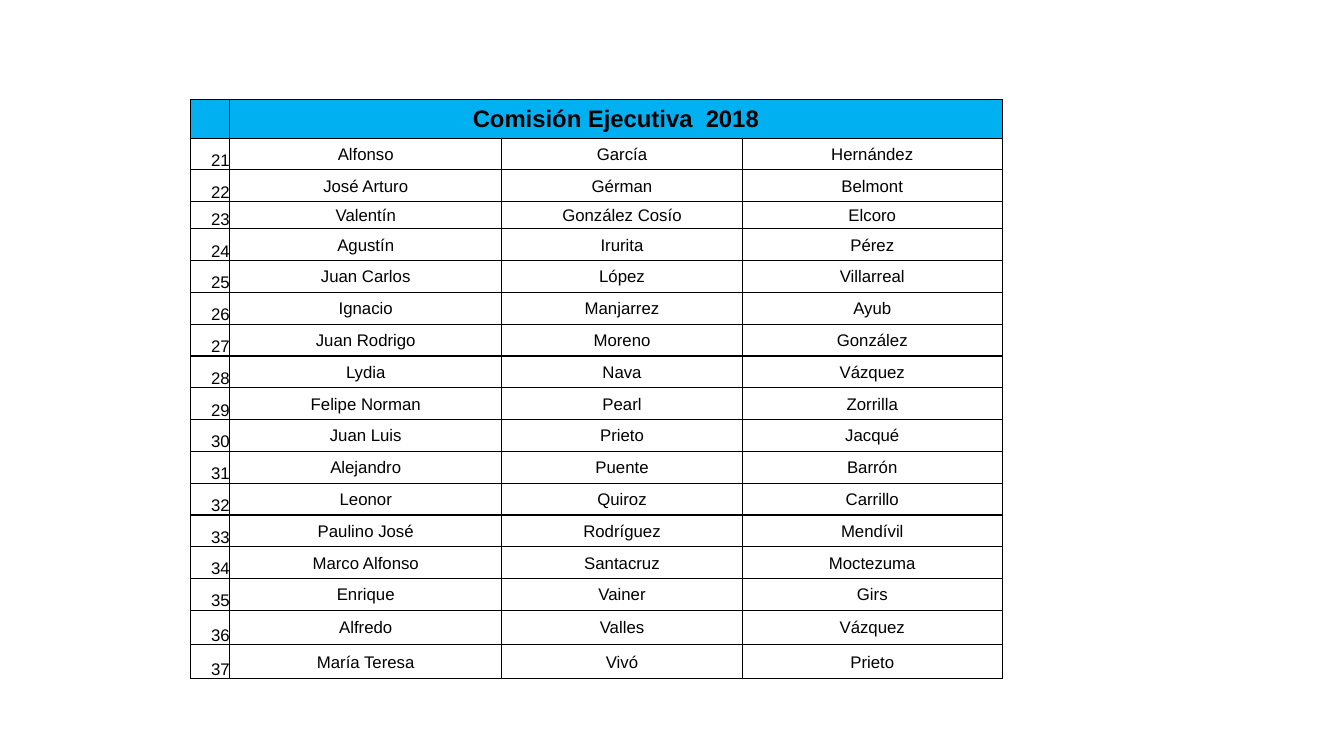
from lxml.etree import SubElement
from pptx import Presentation
from pptx.dml.color import RGBColor
from pptx.enum.text import MSO_ANCHOR as Anchor, PP_ALIGN as Align
from pptx.oxml.ns import qn
from pptx.util import Inches, Pt

COLORS = {"header": "00B0F0", "body": "FFFFFF", "ink": "000000"}
TITLE = "Comisión Ejecutiva  2018"
FIRST_NUMBER = 21
MEMBERS = [
    ("Alfonso", "García", "Hernández"),
    ("José Arturo", "Gérman", "Belmont"),
    ("Valentín", "González Cosío", "Elcoro"),
    ("Agustín", "Irurita", "Pérez"),
    ("Juan Carlos", "López", "Villarreal"),
    ("Ignacio", "Manjarrez", "Ayub"),
    ("Juan Rodrigo", "Moreno", "González"),
    ("Lydia", "Nava", "Vázquez"),
    ("Felipe Norman", "Pearl", "Zorrilla"),
    ("Juan Luis", "Prieto", "Jacqué"),
    ("Alejandro", "Puente", "Barrón"),
    ("Leonor", "Quiroz", "Carrillo"),
    ("Paulino José", "Rodríguez", "Mendívil"),
    ("Marco Alfonso", "Santacruz", "Moctezuma"),
    ("Enrique", "Vainer", "Girs"),
    ("Alfredo", "Valles", "Vázquez"),
    ("María Teresa", "Vivó", "Prieto"),
]
COLUMN_SHARES = [0.39, 2.7, 2.39, 2.58]
SPECIAL_ROWS = {0: 0.38, 3: 0.27, 16: 0.34, 17: 0.34}


def add_borders(cell, width=1):
    """Draw a thin line on all four sides of a cell."""
    properties = cell._tc.get_or_add_tcPr()
    for side in ("lnL", "lnR", "lnT", "lnB"):
        line = SubElement(properties, qn(f"a:{side}"), w=str(Pt(width)))
        fill = SubElement(line, qn("a:solidFill"))
        SubElement(fill, qn("a:srgbClr"), val=COLORS["ink"])


def write_cell(cell, text, *, fill="body", size=12, bold=False,
               align=Align.CENTER, anchor=Anchor.MIDDLE, inset=0):
    """Fill, border and letter one table cell."""
    add_borders(cell)
    cell.fill.solid()
    cell.fill.fore_color.rgb = RGBColor.from_string(COLORS[fill])
    cell.margin_left = cell.margin_right = cell.margin_top = Inches(inset)
    cell.margin_bottom = 0
    cell.vertical_anchor = anchor
    paragraph = cell.text_frame.paragraphs[0]
    paragraph.alignment = align
    if text:
        run = paragraph.add_run()
        run.text = text
        run.font.name = "Arial"
        run.font.size = Pt(size)
        run.font.bold = bold
        run.font.color.rgb = RGBColor.from_string(COLORS["ink"])


def add_committee_table(slide, left, top, width, height):
    """Place the numbered committee list inside the given box."""
    row_count = len(MEMBERS) + 1
    box = [Inches(length) for length in (left, top, width, height)]
    table = slide.shapes.add_table(row_count, len(COLUMN_SHARES), *box).table
    for column, share in zip(table.columns, COLUMN_SHARES):
        column.width = Inches(width * share / sum(COLUMN_SHARES))
    regular = (height - sum(SPECIAL_ROWS.values())) / (row_count - len(SPECIAL_ROWS))
    for index, row in enumerate(table.rows):
        row.height = Inches(SPECIAL_ROWS.get(index, regular))

    for column, text in enumerate(["", TITLE, "", ""]):
        write_cell(table.cell(0, column), text, fill="header", size=17, bold=True)
    table.cell(0, 1).merge(table.cell(0, 3))

    for row, names in enumerate(MEMBERS, start=1):
        write_cell(table.cell(row, 0), str(FIRST_NUMBER + row - 1),
                   align=Align.RIGHT, anchor=Anchor.BOTTOM)
        for column, name in enumerate(names, start=1):
            write_cell(table.cell(row, column), name, inset=0.01)


def main():
    """Build and save the presentation."""
    presentation = Presentation()
    presentation.slide_width = Inches(13.33)
    presentation.slide_height = Inches(7.5)
    slide = presentation.slides.add_slide(presentation.slide_layouts[6])
    add_committee_table(slide, 1.89, 0.99, 8.05, 5.75)
    presentation.save("out.pptx")


if __name__ == "__main__":
    main()
